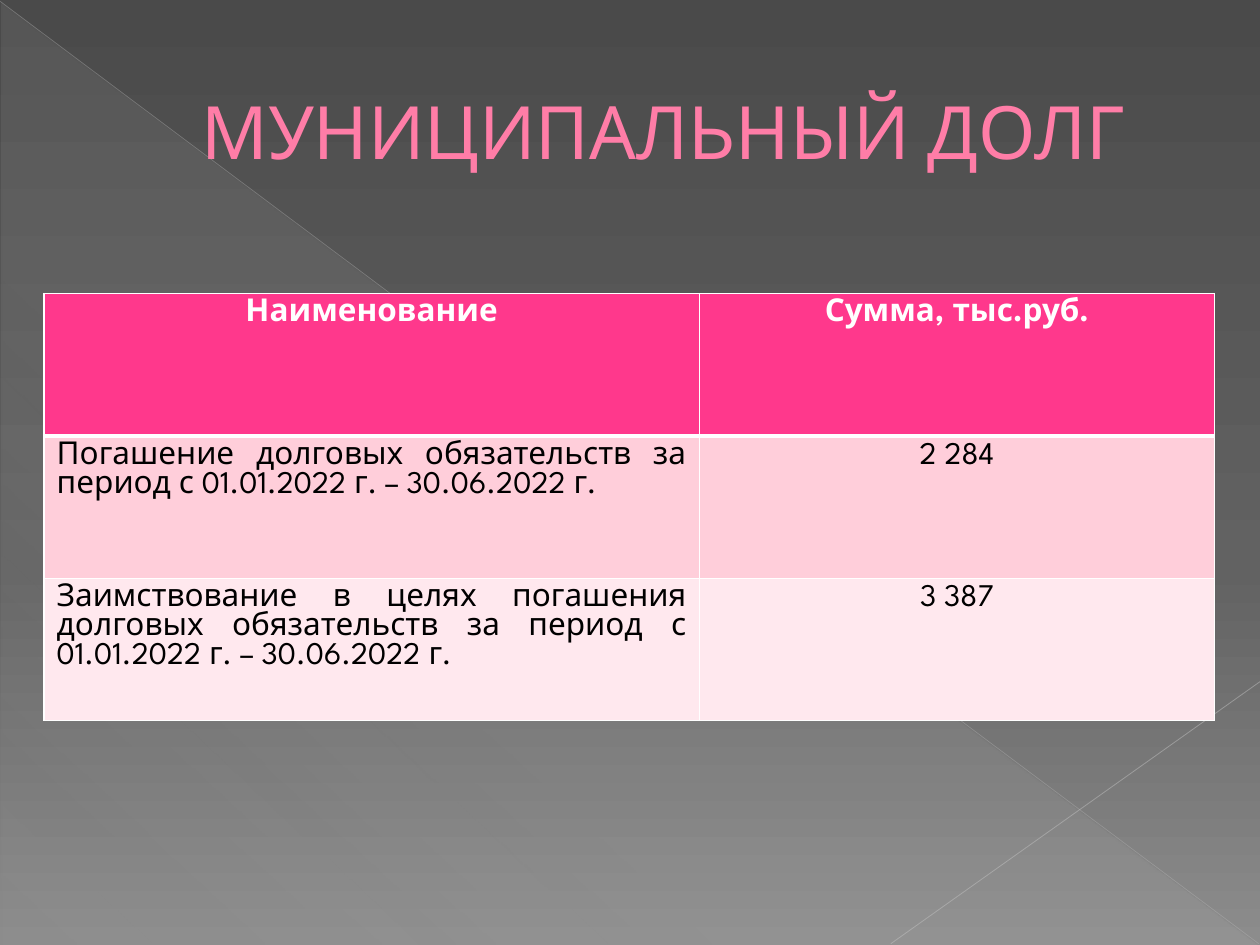
from lxml import etree
from pptx import Presentation
from pptx.dml.color import RGBColor
from pptx.enum.shapes import MSO_CONNECTOR, MSO_SHAPE
from pptx.enum.text import MSO_ANCHOR, MSO_AUTO_SIZE, PP_ALIGN
from pptx.oxml import parse_xml
from pptx.oxml.ns import nsdecls, qn
from pptx.util import Inches, Pt

FONT = "League Spartan"


def color(value):
    return RGBColor.from_string(value)


def set_gradient(fill, properties, stops, angle):
    fill.gradient()
    gradient = properties.find(qn("a:gradFill"))
    stops_xml = "".join(
        f'<a:gs pos="{position * 1000}"><a:srgbClr val="{value}">'
        f'<a:alpha val="{alpha * 1000}"/></a:srgbClr></a:gs>'
        for position, value, alpha in stops
    )
    gradient.getparent().replace(gradient, parse_xml(
        f'<a:gradFill {nsdecls("a")} rotWithShape="1"><a:gsLst>{stops_xml}</a:gsLst>'
        f'<a:lin ang="{angle * 60000}" scaled="0"/></a:gradFill>'
    ))


presentation = Presentation()
presentation.slide_width = Inches(10)
presentation.slide_height = Inches(7.5)
slide = presentation.slides.add_slide(presentation.slide_layouts[5])

background_fill = slide.background.fill
background_properties = next(slide.element.iter(qn("p:bgPr")))
set_gradient(background_fill, background_properties,
             [(0, "4A4A4A", 100), (60, "626262", 100), (100, "8C8C8C", 100)], 90)

triangle = slide.shapes.add_shape(
    MSO_SHAPE.RIGHT_TRIANGLE, Inches(0.01), Inches(0.02), Inches(9.98), Inches(7.48))
triangle.shadow.inherit = False
triangle.line.fill.background()
set_gradient(triangle.fill, triangle.element.spPr,
             [(0, "D2D2D2", 10), (70, "D2D2D2", 8), (100, "D2D2D2", 1)], 133)

diagonals = [
    ((0, 0.01, 9.99, 7.49), "BFBFBF", 0.39, 35),
    ((10, 5.41, 7.07, 7.49), "C6C6C6", 0.47, 45),
]
for ends, line_color, width, opacity in diagonals:
    connector = slide.shapes.add_connector(
        MSO_CONNECTOR.STRAIGHT, *[Inches(value) for value in ends])
    connector.line.color.rgb = color(line_color)
    connector.line.width = Pt(width)
    line_color_element = next(connector.element.spPr.iter(qn("a:srgbClr")))
    etree.SubElement(line_color_element, qn("a:alpha"), val=str(opacity * 1000))
    etree.SubElement(connector.element.spPr, qn("a:effectLst"))

title = slide.shapes.title
title.element.getparent().append(title.element)
title_box = {"left": 0.5, "top": 0.44, "width": 9, "height": 1.18}
for name, value in title_box.items():
    setattr(title, name, Inches(value))
title.text_frame.text = "МУНИЦИПАЛЬНЫЙ ДОЛГ"
title_frame_format = {"vertical_anchor": MSO_ANCHOR.MIDDLE, "word_wrap": True,
                      "auto_size": MSO_AUTO_SIZE.NONE}
for name, value in title_frame_format.items():
    setattr(title.text_frame, name, value)
paragraph = title.text_frame.paragraphs[0]
paragraph.alignment = PP_ALIGN.CENTER
paragraph_properties = paragraph.runs[0].font._element.getparent().getparent().get_or_add_pPr()
paragraph_properties.set("marL", str(Inches(0.53)))
paragraph_properties.set("indent", "0")
title_font = paragraph.runs[0].font
for name, value in {"name": FONT, "size": Pt(42), "bold": False}.items():
    setattr(title_font, name, value)
title_font.color.rgb = color("FF7DA7")
title_font._element.insert(0, parse_xml(
    f'<a:ln {nsdecls("a")} w="{Pt(0.5)}"><a:solidFill>'
    f'<a:srgbClr val="B12761"/></a:solidFill></a:ln>'))

rows = [
    ("Наименование", "Сумма, тыс.руб."),
    ("Погашение долговых обязательств за период с 01.01.2022 г. – 30.06.2022 г.", "2 284"),
    ("Заимствование в целях погашения долговых обязательств за период "
     "с 01.01.2022 г. – 30.06.2022 г.", "3 387"),
]
row_fills = ["FF388C", "FFCEDA", "FFE8EE"]
table = slide.shapes.add_table(
    3, 2, Inches(0.35), Inches(2.33), Inches(9.29), Inches(3.39)).table
for column, width in zip(table.columns, [5.2, 4.09]):
    column.width = Inches(width)

for row_index, texts in enumerate(rows):
    is_header = row_index == 0
    table.rows[row_index].height = Inches(1.13)
    border_widths = {"lnL": 1, "lnR": 1, "lnT": 3 if row_index == 1 else 1,
                     "lnB": 3 if is_header else 1}
    for column_index, text in enumerate(texts):
        cell = table.cell(row_index, column_index)
        cell.text = text
        cell_properties = cell._tc.get_or_add_tcPr()
        for side, width in border_widths.items():
            cell_properties.append(parse_xml(
                f'<a:{side} {nsdecls("a")} w="{Pt(width)}"><a:solidFill>'
                f'<a:srgbClr val="FFFFFF"/></a:solidFill></a:{side}>'))
        cell.fill.solid()
        cell.fill.fore_color.rgb = color(row_fills[row_index])
        paragraph = cell.text_frame.paragraphs[0]
        is_description = column_index == 0 and not is_header
        paragraph.alignment = PP_ALIGN.JUSTIFY if is_description else PP_ALIGN.CENTER
        font = paragraph.runs[0].font
        for name, value in {"name": FONT, "size": Pt(18), "bold": is_header}.items():
            setattr(font, name, value)
        font.color.rgb = color("FFFFFF" if is_header else "000000")

presentation.save("out.pptx")
